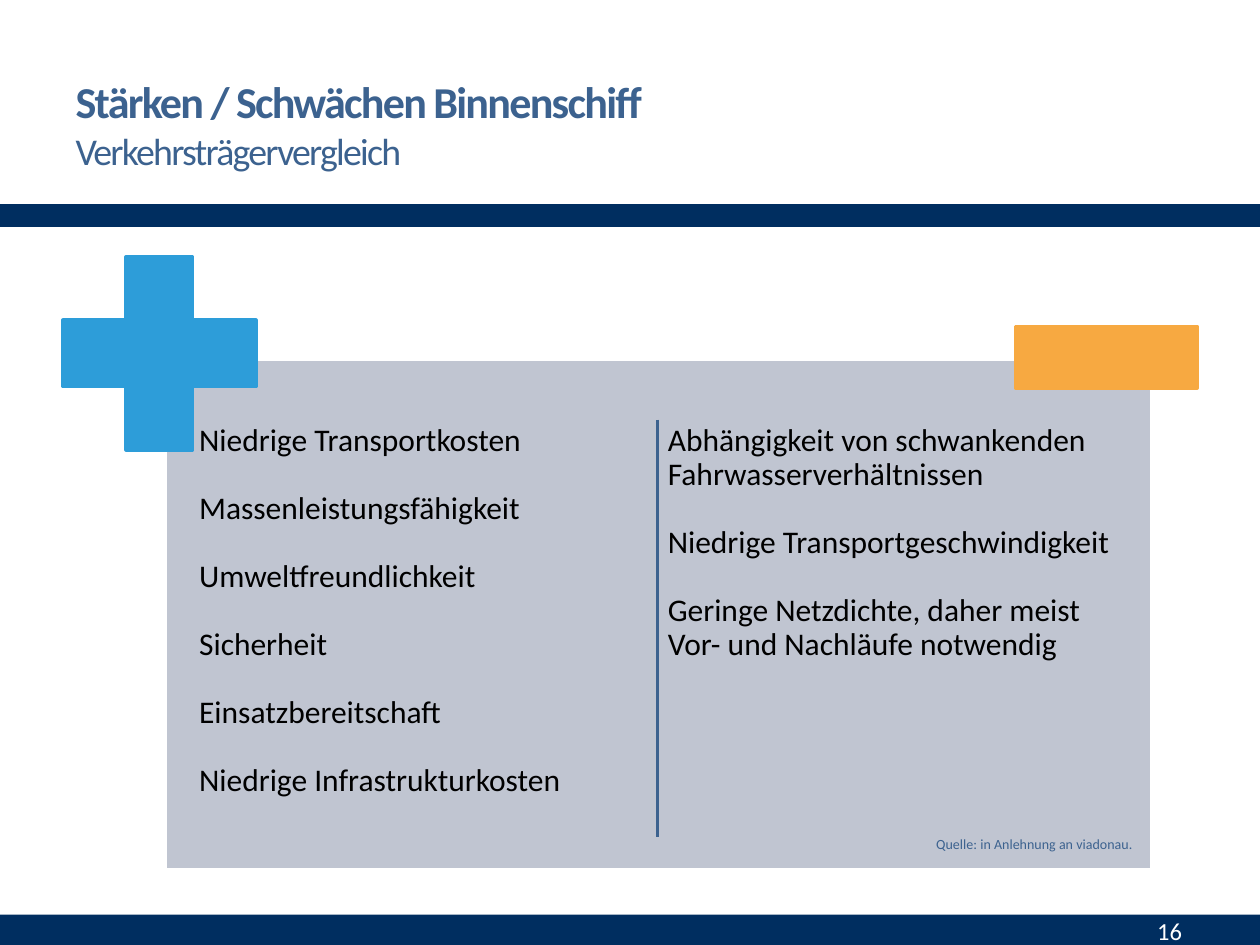
from dataclasses import dataclass

from lxml.etree import SubElement
from pptx import Presentation
from pptx.dml.color import RGBColor
from pptx.enum.shapes import MSO_CONNECTOR, MSO_SHAPE as Preset
from pptx.enum.text import MSO_ANCHOR as Anchor, MSO_AUTO_SIZE as AutoSize, PP_ALIGN as Align
from pptx.oxml.ns import qn
from pptx.util import Inches, Pt


@dataclass(frozen=True)
class Theme:
    font: str = "Calibri"
    navy: str = "002E60"
    blue: str = "3C628F"
    panel: str = "C0C5D1"
    strength: str = "2D9DD9"
    weakness: str = "F7A941"
    white: str = "FFFFFF"
    black: str = "000000"
    title_size: float = 25.2
    subtitle_size: float = 21.6
    list_size: float = 18
    number_size: float = 14
    source_size: float = 8
    outline: float = 2.08
    item_gap: float = 19.4


@dataclass(frozen=True)
class Box:
    left: float
    top: float
    width: float
    height: float

    def lengths(self) -> tuple:
        return tuple(Inches(v) for v in (self.left, self.top, self.width, self.height))


@dataclass(frozen=True)
class Block:
    box: Box
    fill: str
    line: str | None = None
    preset: Preset = Preset.RECTANGLE


@dataclass(frozen=True)
class Column:
    left: float
    items: tuple[str, ...]


THEME = Theme()
LIST_TOP = 3.33

BARS = (
    Block(Box(0, 7.26, 10, 0.24), THEME.navy),
    Block(Box(0, 1.62, 10, 0.18), THEME.navy),
)
PANEL = Block(Box(1.31, 2.85, 7.83, 4.05), THEME.panel, THEME.white)
PLUS = Block(Box(0.5, 2.04, 1.53, 1.53), THEME.strength, THEME.strength, Preset.CROSS)
MINUS = Block(Box(8.06, 2.59, 1.44, 0.49), THEME.weakness, THEME.weakness)

STRENGTHS = Column(1.54, (
    "Niedrige Transportkosten",
    "Massenleistungsfähigkeit",
    "Umweltfreundlichkeit",
    "Sicherheit",
    "Einsatzbereitschaft",
    "Niedrige Infrastrukturkosten",
))
WEAKNESSES = Column(5.26, (
    "Abhängigkeit von schwankenden Fahrwasserverhältnissen",
    "Niedrige Transportgeschwindigkeit",
    "Geringe Netzdichte, daher meist Vor- und Nachläufe notwendig",
))


def add_block(slide, block: Block):
    shape = slide.shapes.add_shape(block.preset, *block.box.lengths())
    shape.shadow.inherit = False
    shape.fill.solid()
    shape.fill.fore_color.rgb = RGBColor.from_string(block.fill)
    if block.line:
        shape.line.color.rgb = RGBColor.from_string(block.line)
        shape.line.width = Pt(THEME.outline)
    else:
        shape.line.fill.background()
    return shape


def add_run(paragraph, text: str, size: float, color: str, bold: bool = False):
    run = paragraph.add_run()
    run.text = text
    run.font.name = THEME.font
    run.font.size = Pt(size)
    run.font.bold = bold
    run.font.color.rgb = RGBColor.from_string(color)
    return run


def place(slide, placeholder, box: Box, anchor: Anchor):
    """Move a placeholder to its box, in front of what is drawn so far."""
    placeholder.left, placeholder.top, placeholder.width, placeholder.height = box.lengths()
    slide.shapes._spTree.append(placeholder._element)
    frame = placeholder.text_frame
    frame.word_wrap = True
    frame.auto_size = AutoSize.NONE
    frame.vertical_anchor = anchor
    return frame


def fill_title(slide) -> None:
    frame = place(slide, slide.shapes.title, Box(0.5, 0.44, 5.21, 1.08), Anchor.MIDDLE)
    heading, subheading = frame.paragraphs[0], frame.add_paragraph()
    runs = (
        add_run(heading, "Stärken / Schwächen Binnenschiff", THEME.title_size, THEME.blue, True),
        add_run(subheading, "Verkehrsträgervergleich", THEME.subtitle_size, THEME.blue),
    )
    for run in runs:
        run.font._element.set("spc", "-100")
    for paragraph in (heading, subheading):
        paragraph.alignment = Align.LEFT


def fill_column(slide, placeholder, column: Column) -> None:
    frame = place(slide, placeholder, Box(column.left, LIST_TOP, 3.64, 3.46), Anchor.TOP)
    frame.margin_left = frame.margin_right = Inches(0.04)
    frame.margin_top = frame.margin_bottom = Inches(0.04)
    for index, item in enumerate(column.items):
        paragraph = frame.add_paragraph() if index else frame.paragraphs[0]
        properties = paragraph._p.get_or_add_pPr()
        properties.set("marL", "0")
        properties.set("indent", "0")
        SubElement(properties, qn("a:buNone"))
        paragraph.line_spacing = 0.9
        paragraph.space_before = Pt(THEME.item_gap if index else 0)
        add_run(paragraph, item, THEME.list_size, THEME.black)


def add_divider(slide, x: float, top: float, bottom: float) -> None:
    divider = slide.shapes.add_connector(
        MSO_CONNECTOR.STRAIGHT, Inches(x), Inches(top), Inches(x), Inches(bottom))
    divider.line.color.rgb = RGBColor.from_string(THEME.blue)
    divider.line.width = Pt(THEME.outline)
    SubElement(divider._element.spPr, qn("a:effectLst"))


def add_note(slide, box: Box, text: str, size: float, color: str, anchor: Anchor) -> None:
    frame = slide.shapes.add_textbox(*box.lengths()).text_frame
    frame.word_wrap = True
    frame.vertical_anchor = anchor
    paragraph = frame.paragraphs[0]
    paragraph.alignment = Align.RIGHT
    add_run(paragraph, text, size, color)


def main() -> None:
    presentation = Presentation()
    presentation.slide_width, presentation.slide_height = Inches(10), Inches(7.5)
    slide = presentation.slides.add_slide(presentation.slide_layouts.get_by_name("Two Content"))
    _, left_list, right_list = slide.placeholders

    # Bars and heading
    for bar in BARS:
        add_block(slide, bar)
    fill_title(slide)

    # Comparison panel with both lists
    add_block(slide, PANEL)
    fill_column(slide, left_list, STRENGTHS)
    fill_column(slide, right_list, WEAKNESSES)

    # Plus and minus signs, divider
    add_block(slide, PLUS).adjustments[0] = 0.328
    add_block(slide, MINUS)
    add_divider(slide, 5.22, LIST_TOP, 6.64)

    # Slide number and source
    add_note(slide, Box(8.31, 7.21, 1.17, 0.36), "16",
             THEME.number_size, THEME.white, Anchor.MIDDLE)
    add_note(slide, Box(6.65, 6.58, 2.44, 0.24), "Quelle: in Anlehnung an viadonau.",
             THEME.source_size, THEME.blue, Anchor.TOP)

    presentation.save("out.pptx")


if __name__ == "__main__":
    main()
